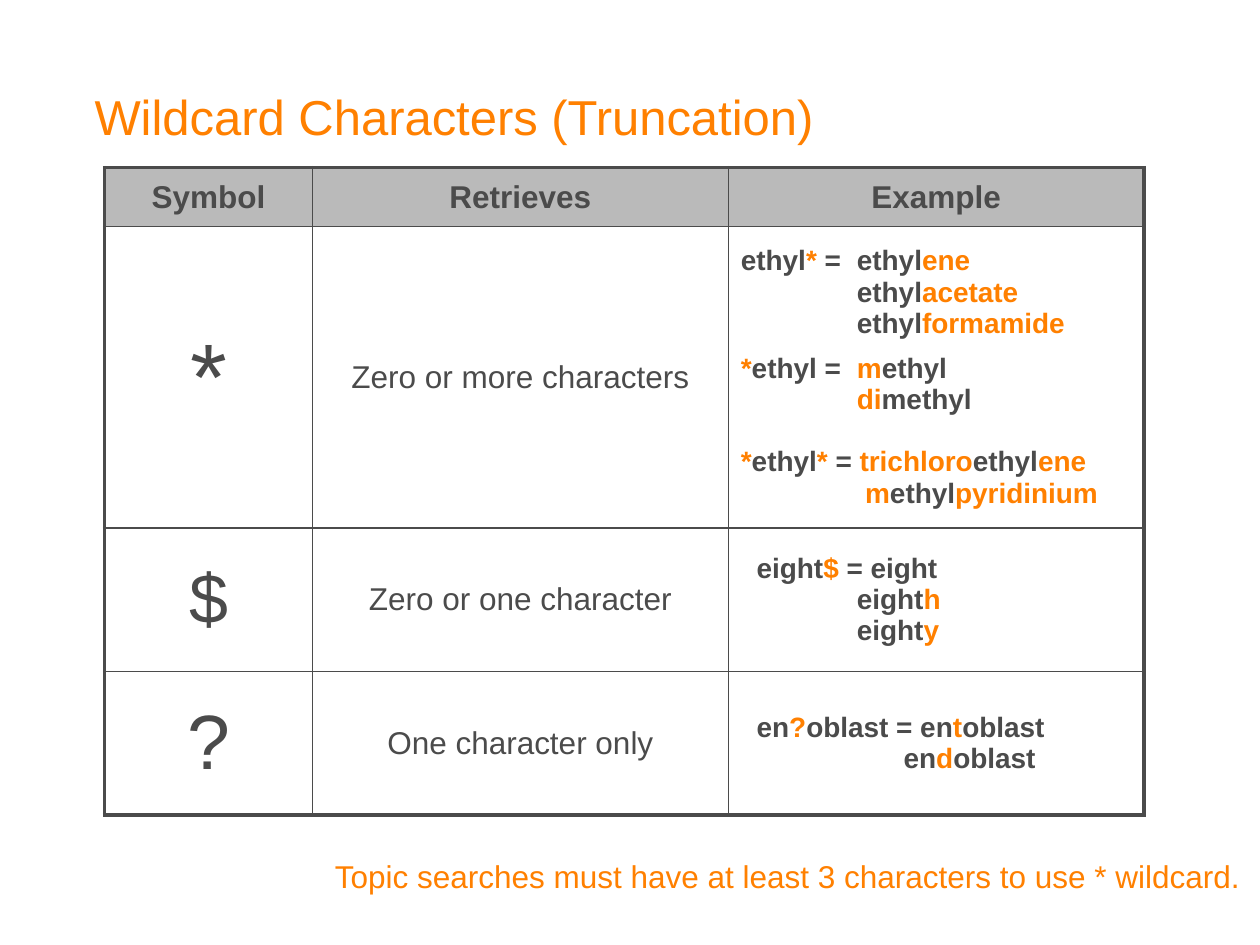
"""Build a slide that explains wildcard characters in a table."""
from lxml import etree
from pptx import Presentation
from pptx.dml.color import RGBColor
from pptx.enum.text import MSO_ANCHOR, PP_ALIGN
from pptx.oxml.ns import qn
from pptx.util import Pt

COLORS = {"accent": "FF8000", "text": "4B4B4B", "header": "BABABA"}
FONT = "Arial"
HEADERS = ("Symbol", "Retrieves", "Example")
COL_WIDTHS = (118.8, 237.6, 237.6)
ROW_HEIGHTS = (33.84, 172.08, 82.08, 82.08)
# Text between bars is accented; each example is (text, first indent, hanging indent, space before).
ROWS = (
    ("*", 54, "Zero or more characters", (
        ("ethyl|*| =\tethyl|ene|\nethyl|acetate|\nethyl|formamide|", 0, 66.3, 0),
        ("|*|ethyl =\t|m|ethyl\n|di|methyl", 0, 66.3, 8),
        ("|*|ethyl|*| = |trichloro|ethyl|ene|\n|m|ethyl|pyridinium|", 0, 71, 18),
    )),
    ("$", 40, "Zero or one character", (
        ("eight|$| = eight\neight|h|\neight|y|", 9, 66.3, 0),
    )),
    ("?", 44, "One character only", (
        ("en|?|oblast = en|t|oblast\nen|d|oblast", 9, 93, 0),
    )),
)


def color(name):
    """Return a named colour."""
    return RGBColor.from_string(COLORS[name])


def style(p, size, tint="text", bold=False, align=PP_ALIGN.CENTER):
    """Set the font and alignment of a paragraph."""
    p.alignment = align
    p.font.name, p.font.size, p.font.bold = FONT, Pt(size), bold
    p.font.color.rgb = color(tint)


def add_title(s, left, top, width, height):
    """Place the slide title in its placeholder."""
    sp = s.shapes.title
    sp.left, sp.top, sp.width, sp.height = Pt(left), Pt(top), Pt(width), Pt(height)
    tf = sp.text_frame
    tf.margin_left = tf.margin_top = tf.margin_right = tf.margin_bottom = 0
    tf.vertical_anchor = MSO_ANCHOR.BOTTOM
    p = tf.paragraphs[0]
    p.text = "Wildcard Characters (Truncation)"
    p.line_spacing = 0.9
    style(p, 28, "accent", align=PP_ALIGN.LEFT)


def add_example(p, text, first, hang, before):
    """Fill a paragraph with an example whose matches line up."""
    p.space_before = Pt(before)
    pPr = p._p.get_or_add_pPr()
    pPr.set("marL", str(Pt(hang)))
    pPr.set("indent", str(Pt(first - hang)))
    style(p, 16, bold=True, align=PP_ALIGN.LEFT)
    for i, piece in enumerate(text.split("|")):
        for j, line in enumerate(piece.split("\n")):
            if j:
                p.add_line_break()
            if line:
                r = p.add_run()
                r.text = line
                if i % 2:
                    r.font.color.rgb = color("accent")


def add_borders(cell, row, col):
    """Draw cell borders, thick on the outside of the table."""
    outer = {"L": col == 0, "R": col == len(COL_WIDTHS) - 1,
             "T": row == 0, "B": row == len(ROW_HEIGHTS) - 1}
    tcPr = cell._tc.get_or_add_tcPr()
    for side, thick in outer.items():
        ln = etree.SubElement(tcPr, qn(f"a:ln{side}"), w=str(Pt(2.25 if thick else 1)))
        fill = etree.SubElement(ln, qn("a:solidFill"))
        etree.SubElement(fill, qn("a:srgbClr"), val=COLORS["text"])


def add_wildcards(s, left, top):
    """Place the table of wildcard symbols."""
    table = s.shapes.add_table(len(ROW_HEIGHTS), len(COL_WIDTHS), Pt(left), Pt(top),
                               Pt(sum(COL_WIDTHS)), Pt(sum(ROW_HEIGHTS))).table
    table.first_row = table.horz_banding = False
    for column, width in zip(table.columns, COL_WIDTHS):
        column.width = Pt(width)
    for i, height in enumerate(ROW_HEIGHTS):
        table.rows[i].height = Pt(height)
        for j, cell in enumerate(table.rows[i].cells):
            cell.vertical_anchor = MSO_ANCHOR.MIDDLE
            add_borders(cell, i, j)
            if i:
                cell.fill.background()
            else:
                cell.fill.solid()
                cell.fill.fore_color.rgb = color("header")
                cell.text = HEADERS[j]
                style(cell.text_frame.paragraphs[0], 18, bold=True)
    for i, (symbol, size, meaning, examples) in enumerate(ROWS, 1):
        for j, (text, points) in enumerate(((symbol, size), (meaning, 18))):
            cell = table.cell(i, j)
            cell.text = text
            style(cell.text_frame.paragraphs[0], points)
        tf = table.cell(i, 2).text_frame
        for k, example in enumerate(examples):
            add_example(tf.add_paragraph() if k else tf.paragraphs[0], *example)


def add_note(s, left, top, width, height):
    """Place the note under the table."""
    tf = s.shapes.add_textbox(Pt(left), Pt(top), Pt(width), Pt(height)).text_frame
    tf.word_wrap = True
    p = tf.paragraphs[0]
    p.text = "Topic searches must have at least 3 characters to use * wildcard."
    style(p, 18, "accent")


def main():
    """Build and save the presentation."""
    prs = Presentation()
    prs.slide_width, prs.slide_height = Pt(720), Pt(540)
    s = prs.slides.add_slide(prs.slide_layouts[5])
    add_title(s, 54, 18, 580, 65.5)
    add_wildcards(s, 59.75, 95.75)
    add_note(s, 168, 486, 564, 29)
    prs.save("out.pptx")


if __name__ == "__main__":
    main()
